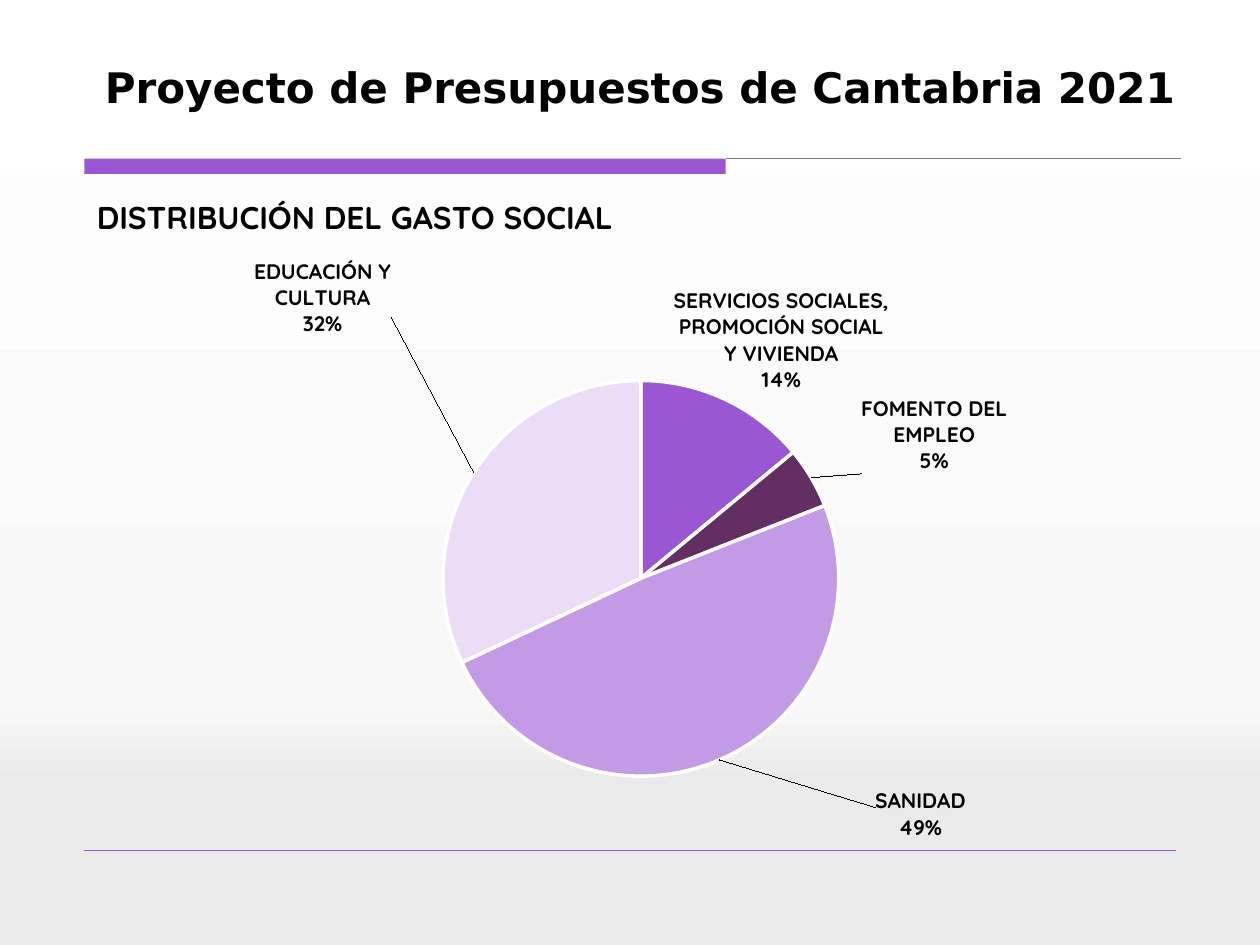
from copy import deepcopy

from lxml import etree
from pptx import Presentation
from pptx.chart.data import CategoryChartData
from pptx.dml.color import RGBColor
from pptx.enum.chart import XL_CHART_TYPE, XL_LABEL_POSITION
from pptx.enum.shapes import MSO_CONNECTOR, MSO_SHAPE
from pptx.enum.text import MSO_ANCHOR, PP_ALIGN
from pptx.oxml import parse_xml
from pptx.oxml.ns import nsdecls, qn
from pptx.util import Inches, Pt

BLACK = RGBColor(0x00, 0x00, 0x00)
WHITE = RGBColor(0xFF, 0xFF, 0xFF)
GREY = RGBColor(0x7F, 0x7F, 0x7F)
PURPLE = RGBColor(0x9B, 0x57, 0xD3)
PLUM = RGBColor(0x63, 0x2E, 0x62)
LILAC = RGBColor(0xC3, 0x9A, 0xE5)
LAVENDER = RGBColor(0xEB, 0xDD, 0xF6)
LEFT = Inches(0.67)


def make_layout(**settings):
    layout = etree.Element(qn("c:layout"))
    manual = etree.SubElement(layout, qn("c:manualLayout"))
    for tag, value in settings.items():
        etree.SubElement(manual, qn("c:" + tag), val=str(value))
    return layout


deck = Presentation()
deck.slide_width, deck.slide_height = Inches(10), Inches(7.5)
page = deck.slides.add_slide(deck.slide_layouts[5])

# Background gradient, top to bottom
backdrop = page.background.fill
backdrop.gradient()
gradient = page._element.cSld.find(".//" + qn("a:gradFill"))
for child in list(gradient):
    gradient.remove(child)
stops = etree.SubElement(gradient, qn("a:gsLst"))
for percent, color in [(0, "FFFFFF"), (74, "F8F8F8"), (83, "EAEAEA"), (100, "EAEAEA")]:
    stop = etree.SubElement(stops, qn("a:gs"), pos=str(percent * 1000))
    etree.SubElement(stop, qn("a:srgbClr"), val=color)
etree.SubElement(gradient, qn("a:lin"), ang="5400000", scaled="0")

# Header bar and thin rules
bar = page.shapes.add_shape(MSO_SHAPE.RECTANGLE, LEFT, Inches(1.26), Inches(5.09), Inches(0.12))
bar.shadow.inherit = False
bar.fill.solid()
bar.fill.fore_color.rgb = PURPLE
bar.line.fill.background()
for start, end, y, color, width in [(5.76, 9.37, 1.26, GREY, 0.5), (0.67, 9.33, 6.75, PURPLE, 0.25)]:
    rule = page.shapes.add_connector(
        MSO_CONNECTOR.STRAIGHT, Inches(start), Inches(y), Inches(end), Inches(y))
    rule.line.color.rgb = color
    rule.line.width = Pt(width)
    etree.SubElement(rule._element.spPr, qn("a:effectLst"))

# Title and subtitle
title = page.shapes.title
title.left, title.top, title.width, title.height = LEFT, Inches(0.44), Inches(8.82), Inches(1.11)
subtitle = page.shapes.add_textbox(LEFT, Inches(1.52), Inches(8.27), Inches(0.4))
for box, text, size, font, align in [
    (title, "Proyecto de Presupuestos de Cantabria 2021", 24, "DejaVu Sans", PP_ALIGN.CENTER),
    (subtitle, "DISTRIBUCIÓN DEL GASTO SOCIAL", 18, "Quicksand", PP_ALIGN.LEFT),
]:
    frame = box.text_frame
    frame.word_wrap = True
    frame.vertical_anchor = MSO_ANCHOR.TOP
    frame.text = text
    paragraph = frame.paragraphs[0]
    paragraph.alignment = align
    paragraph.font.size = Pt(size)
    paragraph.font.name = font
    paragraph.font.bold = True
    paragraph.font.color.rgb = BLACK

# Pie of social spending
spending = CategoryChartData()
spending.categories = [
    "SERVICIOS SOCIALES, PROMOCIÓN SOCIAL Y VIVIENDA",
    "FOMENTO DEL EMPLEO",
    "SANIDAD",
    "EDUCACIÓN Y CULTURA",
]
spending.add_series("Series 1", (14, 5, 49, 32))
chart = page.shapes.add_chart(
    XL_CHART_TYPE.PIE, LEFT, Inches(2.05), Inches(8.66), Inches(4.62), spending).chart
chart.has_legend = False
chart.has_title = False
chart.font.name = "DejaVu Sans"
chart.font.size = Pt(10)
chart.font.color.rgb = BLACK
plot = chart.plots[0]
plot.vary_by_categories = True
for index, color in enumerate([PURPLE, PLUM, LILAC, LAVENDER]):
    slice_format = plot.series[0].points[index].format
    slice_format.fill.solid()
    slice_format.fill.fore_color.rgb = color
    slice_format.line.color.rgb = WHITE
    slice_format.line.width = Pt(2)

# Category and percentage labels
labels = plot.series[0].data_labels
labels.show_value = False
labels.show_category_name = True
labels.show_percentage = True
labels.number_format = "0%"
labels.number_format_is_linked = False
labels.position = XL_LABEL_POSITION.BEST_FIT
labels.font.name = "Quicksand"
labels.font.size = Pt(12)
labels.font.bold = True
labels.font.color.rgb = BLACK
label_group = labels._element
for leader in label_group.findall(qn("c:showLeaderLines")):
    label_group.remove(leader)
label_group.append(parse_xml(f"<c:separator {nsdecls('c')}>\n</c:separator>"))

# Each label is shifted by a share of the chart's size
shared_settings = list(label_group)
for index, (x, y) in enumerate([(-0.05, 0), (0.04, 0), (0.14, 0.07), (-0.07, -0.26)]):
    label = etree.Element(qn("c:dLbl"))
    etree.SubElement(label, qn("c:idx"), val=str(index))
    label.append(make_layout(x=x, y=y))
    label.extend(deepcopy(shared_settings))
    label_group.insert(index, label)
etree.SubElement(label_group, qn("c:showLeaderLines"), val="1")

# Fixed inner plot area
area = chart._chartSpace.chart.plotArea
for layout in area.findall(qn("c:layout")):
    area.remove(layout)
area.insert(0, make_layout(
    layoutTarget="inner", xMode="edge", yMode="edge", x=0.08, y=0.21, w=0.86, h=0.68))

deck.save("out.pptx")
